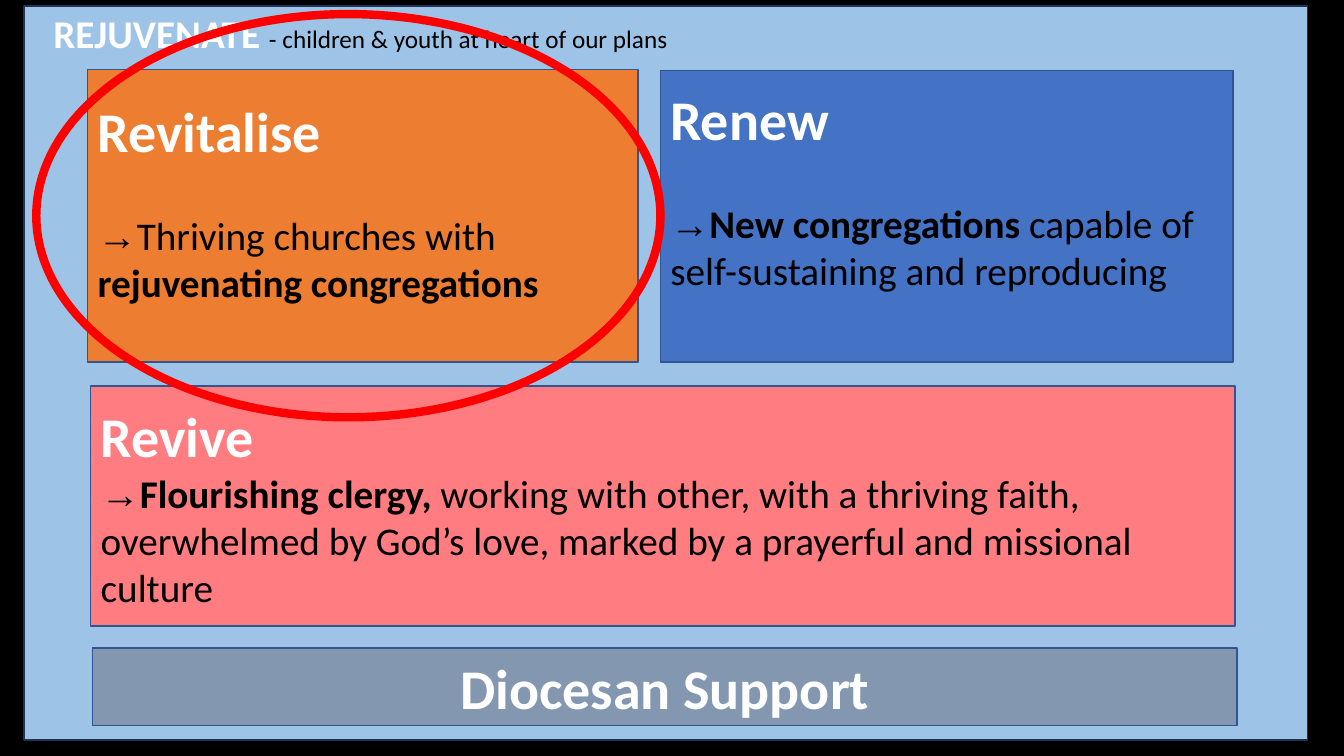
from pptx import Presentation
from pptx.dml.color import RGBColor
from pptx.enum.shapes import MSO_SHAPE
from pptx.enum.text import MSO_ANCHOR, PP_ALIGN
from pptx.util import Inches, Pt

BLACK, WHITE, RED = "000000", "FFFFFF", "FF0000"
SKY, NAVY, EDGE = "9DC3E6", "1E3256", "325491"
ORANGE, BLUE, PINK, SLATE = "ED7D31", "4472C4", "FF7C80", "8497B0"


def color(code):
    return RGBColor.from_string(code)


class Board:
    font = "Calibri"
    head, body, note = 40, 28, 18

    def __init__(self, deck):
        self.slide = deck.slides.add_slide(deck.slide_layouts[6])
        back = self.slide.background.fill
        back.solid()
        back.fore_color.rgb = color(BLACK)

    def shape(self, kind, at, fill, edge, width=1):
        item = self.slide.shapes.add_shape(kind, *map(Inches, at))
        item.shadow.inherit = False
        if fill:
            item.fill.solid()
            item.fill.fore_color.rgb = color(fill)
        else:
            item.fill.background()
        item.line.color.rgb = color(edge)
        item.line.width = Pt(width)
        return item

    def label(self, para, runs, align=PP_ALIGN.LEFT):
        """Fill a paragraph from (text, size, colour, bold, font) runs."""
        para.alignment = align
        for text, size, ink, bold, font in runs:
            run = para.add_run()
            run.text = text
            run.font.size = Pt(size)
            run.font.color.rgb = color(ink)
            run.font.bold = bold
            run.font.name = font

    def title(self, at, name, tail):
        frame = self.slide.shapes.add_textbox(*map(Inches, at)).text_frame
        frame.word_wrap = True
        self.label(frame.paragraphs[0], [
            (name, self.body, WHITE, True, self.font),
            (tail, self.note, BLACK, False, self.font)])

    def panel(self, at, fill, head, parts=(), gap=0, foot=0.05,
              align=PP_ALIGN.LEFT):
        """Draw a box with a heading and an arrow line of (text, bold) parts."""
        frame = self.shape(MSO_SHAPE.RECTANGLE, at, fill, EDGE).text_frame
        frame.word_wrap = True
        frame.vertical_anchor = MSO_ANCHOR.MIDDLE
        frame.margin_bottom = Inches(foot)
        self.label(frame.paragraphs[0],
                   [(head, self.head, WHITE, True, self.font)], align)
        if parts:
            para = frame.add_paragraph()
            para.space_before = Pt(gap)
            runs = [(text, self.body, BLACK, bold, self.font)
                    for text, bold in parts]
            self.label(para, [("→", self.body, BLACK, False, "Arial")] + runs)


def main():
    deck = Presentation()
    deck.slide_width, deck.slide_height = Inches(13.33), Inches(7.5)
    board = Board(deck)
    board.shape(MSO_SHAPE.RECTANGLE, (0.24, 0.06, 12.73, 7.28), SKY, NAVY)
    board.title((0.43, 0.04, 7.39, 0.57), "REJUVENATE ",
                "- children & youth at heart of our plans")
    board.panel((0.92, 6.43, 11.35, 0.77), SLATE, "Diocesan Support",
                align=PP_ALIGN.CENTER)
    board.panel((0.87, 0.69, 5.46, 2.9), ORANGE, "Revitalise",
                [("Thriving churches with ", False),
                 ("rejuvenating congregations", True)], gap=34, foot=0.35)
    board.panel((6.55, 0.7, 5.68, 2.89), BLUE, "Renew",
                [("New congregations ", True),
                 ("capable of self-sustaining and reproducing", False)],
                gap=34, foot=0.59)
    board.panel((0.9, 3.83, 11.35, 2.38), PINK, "Revive",
                [("Flourishing clergy, ", True),
                 ("working with other, with a thriving faith, overwhelmed by "
                  "God’s love, marked by a prayerful and missional culture",
                  False)])
    board.shape(MSO_SHAPE.OVAL, (0.36, 0.14, 6.19, 4), None, RED, 6)
    deck.save("out.pptx")


if __name__ == "__main__":
    main()
